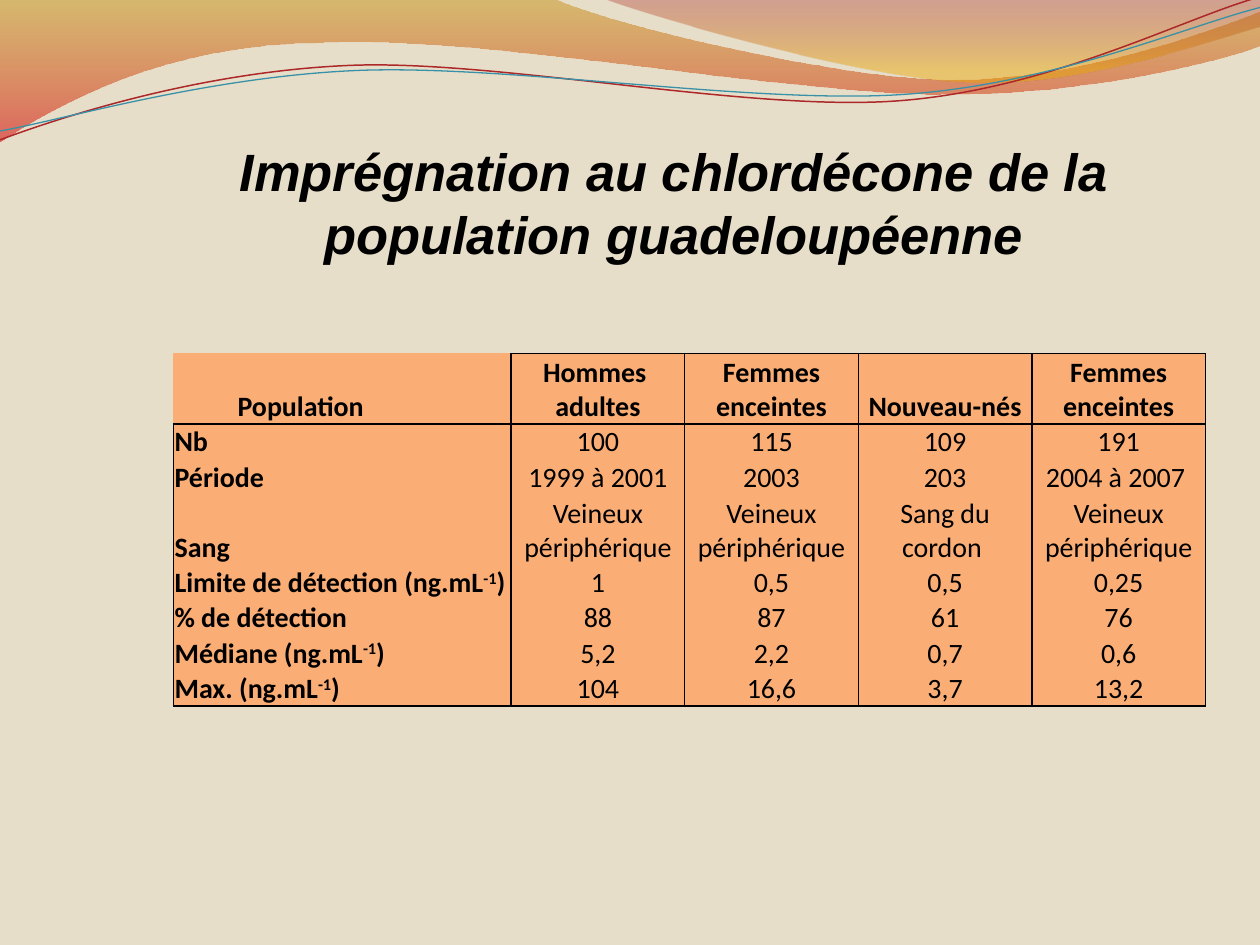
import math
from dataclasses import dataclass

from lxml import etree
from pptx import Presentation
from pptx.dml.color import RGBColor
from pptx.enum import text
from pptx.oxml import ns
from pptx.util import Pt


@dataclass(frozen=True)
class Theme:
    background: str = "E7DEC9"
    ink: str = "000000"
    cell: str = "FAAE76"
    red_line: str = "AC2829"
    blue_line: str = "3891A7"
    title_font: str = "Arial"
    table_font: str = "Calibri"
    title_size: float = 30
    table_size: float = 16
    border: float = 1


THEME = Theme()

# Wave outlines in points: a pair is a straight step, a triple of pairs a Bézier curve
BACK_WAVE = [
    (0, -0.7), (316.8, -0.7),
    ((342.7, 12.2), (478, 45.4), (545.8, 45.4)),
    ((614.2, 45.4), (689.8, 18.7), (720, 6.5)),
    (720.7, 25.9),
    ((707.8, 31.7), (626.4, 54.7), (537.1, 54)),
    ((447.8, 54), (275, 20.2), (185, 24.5)),
    ((92.9, 25.2), (33.1, 59.8), (-0.7, 81.4)),
]
FRONT_WAVE = [
    (344.9, -0.7),
    ((366.5, 7.9), (491, 44.6), (553.7, 46.8)),
    ((616.3, 49.7), (691.9, 23), (720, 15.1)),
    (720, 0),
]
RED_LINE = [
    (0, 79.9),
    ((34.6, 67), (113.8, 41), (199.4, 37.4)),
    ((284.4, 33.8), (427, 64.1), (513.4, 57.6)),
    ((599.8, 51.1), (675.4, 10.8), (718.6, -1.4)),
]
BLUE_LINE = [
    (0, 74.9),
    ((33.8, 69.1), (118.1, 43.9), (203.8, 40.3)),
    ((290.2, 36.7), (429.8, 59.8), (516.2, 54)),
    ((601.9, 48.2), (677.5, 15.1), (720, 4.3)),
]
LINE_TILT = -2.7

# Table content; "^" encloses superscript
UNIT = "(ng.mL^-1^)"
VEIN = "Veineux périphérique"
ROWS = [
    ["Population", "Hommes \nadultes", "Femmes enceintes", "Nouveau-nés", "Femmes enceintes"],
    ["Nb", "100", "115", "109", "191"],
    ["Période", "1999 à 2001", "2003", "203", "2004 à 2007 "],
    ["Sang", VEIN, VEIN, "Sang du cordon ", VEIN],
    [f"Limite de détection {UNIT}", "1", "0,5", "0,5", "0,25"],
    ["% de détection", "88", "87", "61", "76"],
    [f"Médiane {UNIT}", "5,2", "2,2", "0,7", "0,6"],
    [f"Max. {UNIT}", "104", "16,6", "3,7", "13,2"],
]
TWO_LINE_ROWS = (0, 3)
LINE_HEIGHT = 20.15


def rgb(code):
    return RGBColor.from_string(code)


def style_font(font, name, size, bold, italic=False):
    font.name, font.size = name, Pt(size)
    font.bold, font.italic = bold, italic
    font.color.rgb = rgb(THEME.ink)


def is_curve(step):
    return len(step) == 3


def turn(point, degrees, centre):
    angle = math.radians(degrees)
    dx, dy = point[0] - centre[0], point[1] - centre[1]
    return (centre[0] + dx * math.cos(angle) - dy * math.sin(angle),
            centre[1] + dx * math.sin(angle) + dy * math.cos(angle))


def add_outline(slide, outline, close, tilt=0, centre=(0, 0)):
    """Lay out all anchors and handles, then join each triple into a Bézier curve."""
    flat = [p for step in outline for p in (step if is_curve(step) else [step])]
    points = [tuple(map(Pt, turn(p, -tilt, centre))) for p in flat]
    builder = slide.shapes.build_freeform(*points[0])
    builder.add_line_segments(points[1:], close=close)
    outline_shape = builder.convert_to_shape()
    outline_shape.shadow.inherit = False
    outline_shape.rotation = tilt
    segments = iter(list(outline_shape.element.spPr.iter(ns.qn("a:lnTo"))))
    for step in outline[1:]:
        segment = next(segments)
        if is_curve(step):
            curve = etree.Element(ns.qn("a:cubicBezTo"))
            segment.addprevious(curve)
            for handle in (segment, next(segments), next(segments)):
                curve.append(handle[0])
                handle.getparent().remove(handle)
    return outline_shape


def add_wave(slide, outline, stops):
    """Filled wave with a top-to-bottom gradient of (position, colour, opacity %)."""
    wave = add_outline(slide, outline, close=True)
    wave.line.fill.background()
    wave.fill.gradient()
    wave.fill.gradient_angle = 270
    for stop, (position, colour, _) in zip(wave.fill.gradient_stops, stops):
        stop.position = position
        stop.color.rgb = rgb(colour)
    colours = wave.element.spPr.iter(ns.qn("a:srgbClr"))
    for node, (_, _, opacity) in zip(list(colours), stops):
        etree.SubElement(node, ns.qn("a:alpha"), val=str(opacity * 1000))


def add_curve(slide, outline, centre, colour, width):
    curve = add_outline(slide, outline, False, LINE_TILT, centre)
    curve.fill.background()
    curve.line.color.rgb = rgb(colour)
    curve.line.width = Pt(width)


def set_title(slide, wording):
    title = slide.shapes.title
    title.left, title.top, title.width, title.height = map(Pt, (93.3, 75.2, 583.9, 79.9))
    frame = title.text_frame
    frame.text = wording
    frame.word_wrap = True
    frame.auto_size = text.MSO_AUTO_SIZE.SHAPE_TO_FIT_TEXT
    frame.vertical_anchor = text.MSO_ANCHOR.BOTTOM
    heading = frame.paragraphs[0]
    heading.alignment = text.PP_ALIGN.CENTER
    heading.line_spacing = Pt(36)
    style_font(heading.font, THEME.title_font, THEME.title_size, True, True)


def set_borders(cell, sides):
    properties = cell._tc.get_or_add_tcPr()
    for side in "LRTB":
        edge = etree.SubElement(properties, ns.qn(f"a:ln{side}"), w=str(Pt(THEME.border)))
        if side in sides:
            fill = etree.SubElement(edge, ns.qn("a:solidFill"))
            etree.SubElement(fill, ns.qn("a:srgbClr"), val=THEME.ink)
        else:
            etree.SubElement(edge, ns.qn("a:noFill"))


def border_sides(row, column):
    if row == 0:
        return "LRTB" if column else "RB"
    return "LR" + ("T" if row == 1 else "") + ("B" if row == len(ROWS) - 1 else "")


def fill_cell(cell, wording, row, column):
    set_borders(cell, border_sides(row, column))
    cell.fill.solid()
    cell.fill.fore_color.rgb = rgb(THEME.cell)
    cell.vertical_anchor = text.MSO_ANCHOR.BOTTOM
    cell.margin_left = cell.margin_right = cell.margin_top = Pt(0.7)
    cell.margin_bottom = 0
    for i, line in enumerate(wording.split("\n")):
        paragraph = cell.text_frame.add_paragraph() if i else cell.text_frame.paragraphs[0]
        paragraph.alignment = text.PP_ALIGN.CENTER if column else text.PP_ALIGN.LEFT
        style_font(paragraph.font, THEME.table_font, THEME.table_size, row == 0 or column == 0)
        for j, piece in enumerate(line.split("^")):
            run = paragraph.add_run()
            run.text = piece
            if j % 2:
                run.font._element.set("baseline", "30000")


def add_results(slide):
    widths = [193] + [99.2] * 4
    heights = [LINE_HEIGHT * (2 if i in TWO_LINE_ROWS else 1) for i in range(len(ROWS))]
    results = slide.shapes.add_table(len(ROWS), len(widths), Pt(99.1), Pt(202),
                                     Pt(sum(widths)), Pt(sum(heights))).table
    results.first_row = results.horz_banding = False
    for column, width in zip(results.columns, widths):
        column.width = Pt(width)
    for r, (height, wordings) in enumerate(zip(heights, ROWS)):
        results.rows[r].height = Pt(height)
        for c, wording in enumerate(wordings):
            fill_cell(results.cell(r, c), wording, r, c)
    # The corner heading is indented one level
    corner = results.cell(0, 0).text_frame.paragraphs[0]
    corner.level = 1
    properties = corner._p.get_or_add_pPr()
    properties.set("marL", str(Pt(36)))
    properties.set("indent", "0")


def main():
    deck = Presentation()
    deck.slide_width, deck.slide_height = Pt(720), Pt(540)
    slide = deck.slides.add_slide(deck.slide_layouts[5])
    slide.background.fill.solid()
    slide.background.fill.fore_color.rgb = rgb(THEME.background)
    # Wave decoration
    add_wave(slide, BACK_WAVE, [(0, "C38B00", 45), (1, "D60305", 55)])
    add_wave(slide, FRONT_WAVE, [(0, "A11112", 30), (0.8, "E9A600", 45)])
    add_curve(slide, RED_LINE, (359.3, 41.4), THEME.red_line, 0.85)
    add_curve(slide, BLUE_LINE, (359.6, 42.5), THEME.blue_line, 0.75)
    # Content
    add_results(slide)
    set_title(slide, "Imprégnation au chlordécone de la population guadeloupéenne")
    deck.save("out.pptx")


if __name__ == "__main__":
    main()
